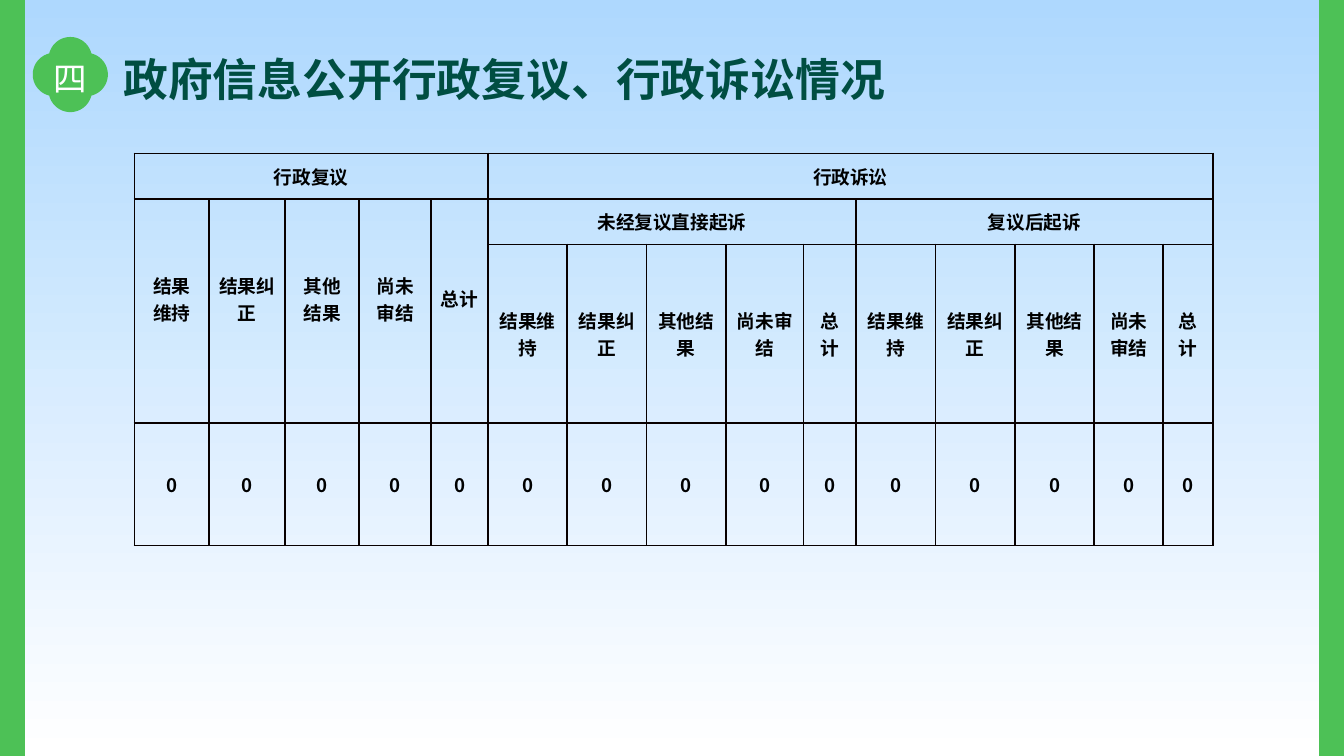
"""Build the slide on administrative review and litigation results."""
import math

from lxml import etree
from pptx import Presentation, util as u
from pptx.dml.color import RGBColor
from pptx.enum import shapes, text
from pptx.oxml import ns

GREEN = RGBColor(0x4D, 0xC1, 0x56)
DARK_GREEN = RGBColor(0x00, 0x4E, 0x42)
SKY = RGBColor(0xAE, 0xD8, 0xFE)
WHITE = RGBColor(0xFF, 0xFF, 0xFF)
BLACK = RGBColor(0x00, 0x00, 0x00)
BORDER = RGBColor(0x08, 0x00, 0x00)

WIDTH, HEIGHT, BAR = 25.4, 14.29, 0.46
RESULTS = ["结果维持", "结果纠正", "其他结果", "尚未审结", "总计"]
COLS = [1.41, 1.44, 1.4, 1.36, 1.07,
        1.5, 1.5, 1.5, 1.47, 0.99,
        1.5, 1.5, 1.5, 1.3, 0.94]
ROWS = [0.86, 0.86, 3.38, 2.31]


class Deck:
    """Hold the style and the current slide."""

    TITLE = {"name": "Noto Sans CJK SC", "size": u.Pt(24), "bold": True}
    NUMERAL = {"name": "Noto Sans CJK JP", "size": u.Pt(18)}
    CELL = {"name": "Noto Sans CJK SC", "size": u.Pt(10), "bold": True}

    def __init__(self, prs):
        """Add a blank slide with a sky gradient."""
        self.s = prs.slides.add_slide(prs.slide_layouts[6])
        fill = self.s.background.fill
        fill.gradient()
        fill.gradient_angle = 270
        for stop, color in zip(fill.gradient_stops, (SKY, WHITE)):
            stop.color.rgb = color

    def add_words(self, tf, words, style, color, align):
        """Put one styled run into a text frame."""
        p = tf.paragraphs[0]
        p.alignment = align
        r = p.add_run()
        r.text = words
        for name, value in style.items():
            setattr(r.font, name, value)
        r.font.color.rgb = color
        etree.SubElement(r._r.get_or_add_rPr(), ns.qn("a:ea"), typeface=style["name"])

    def bar(self, left):
        """Draw a full-height side bar."""
        sp = self.s.shapes.add_shape(shapes.MSO_SHAPE.RECTANGLE, u.Cm(left), 0,
                                     u.Cm(BAR), u.Cm(HEIGHT))
        sp.shadow.inherit = False
        sp.fill.solid()
        sp.fill.fore_color.rgb = GREEN
        sp.line.color.rgb = GREEN
        sp.line.width = u.Pt(1)

    def label(self, parent, box, words, style, color, align=text.PP_ALIGN.LEFT):
        """Add a text box to a shape tree."""
        sp = parent.add_textbox(*map(u.Cm, box))
        sp.text_frame.word_wrap = True
        self.add_words(sp.text_frame, words, style, color, align)

    def badge(self, cx, cy, words, offset=0.3, radius=0.41):
        """Draw a four-lobed clover with a numeral in it."""
        points = []
        for deg in range(0, 360, 3):
            t = math.radians(deg)
            a = math.radians((deg + 45) % 90 - 45)
            reach = offset * math.cos(a) + math.sqrt(
                radius ** 2 - (offset * math.sin(a)) ** 2)
            points.append((u.Cm(cx + reach * math.cos(t)),
                           u.Cm(cy + reach * math.sin(t))))
        group = self.s.shapes.add_group_shape().shapes
        outline = group.build_freeform(*points[0])
        outline.add_line_segments(points[1:], close=True)
        sp = outline.convert_to_shape()
        sp.shadow.inherit = False
        sp.fill.solid()
        sp.fill.fore_color.rgb = GREEN
        sp.line.fill.background()
        self.label(group, (cx - 0.57, 0.97, 1.14, 1.02), words, self.NUMERAL,
                   WHITE, text.PP_ALIGN.CENTER)

    def border(self, cell):
        """Give a cell a thin line on all four sides."""
        tcPr = cell._tc.get_or_add_tcPr()
        for i, side in enumerate("LRTB"):
            ln = etree.Element(ns.qn(f"a:ln{side}"), w=str(u.Pt(1)))
            fill = etree.SubElement(ln, ns.qn("a:solidFill"))
            etree.SubElement(fill, ns.qn("a:srgbClr"), val=str(BORDER))
            tcPr.insert(i, ln)

    def table(self, left, top, entries):
        """Add a table from (row, column, row span, column span, words)."""
        frame = self.s.shapes.add_table(len(ROWS), len(COLS), u.Cm(left), u.Cm(top),
                                        u.Cm(sum(COLS)), u.Cm(sum(ROWS)))
        tbl = frame.table
        tbl.first_row = tbl.horz_banding = False
        for col, width in zip(tbl.columns, COLS):
            col.width = u.Cm(width)
        for row, height in zip(tbl.rows, ROWS):
            row.height = u.Cm(height)
        for cell in tbl.iter_cells():
            cell.margin_left = cell.margin_right = u.Cm(0.18)
            cell.margin_top = cell.margin_bottom = 0
            cell.vertical_anchor = text.MSO_ANCHOR.MIDDLE
            cell.fill.background()
            self.border(cell)
        for row, col, down, across, words in entries:
            cell = tbl.cell(row, col)
            if down * across > 1:
                cell.merge(tbl.cell(row + down - 1, col + across - 1))
            if down > 1:
                cell.margin_bottom = u.Cm(0.47)
            self.add_words(cell.text_frame, words, self.CELL, BLACK,
                           text.PP_ALIGN.CENTER)


def main():
    """Build and save the slide."""
    prs = Presentation()
    prs.slide_width, prs.slide_height = u.Cm(WIDTH), u.Cm(HEIGHT)
    deck = Deck(prs)
    deck.bar(0)
    deck.bar(WIDTH - BAR)
    deck.label(deck.s.shapes, (2.08, 0.86, 15.62, 1.27),
               "政府信息公开行政复议、行政诉讼情况", deck.TITLE, DARK_GREEN)
    deck.badge(1.33, 1.41, "四")

    entries = [(0, 0, 1, 5, "行政复议"), (0, 5, 1, 10, "行政诉讼"),
               (1, 5, 1, 5, "未经复议直接起诉"), (1, 10, 1, 5, "复议后起诉")]
    for i, result in enumerate(RESULTS):
        entries.append((1, i, 2, 1, result))
        entries += [(2, start + i, 1, 1, result) for start in (5, 10)]
    entries += [(3, col, 1, 1, "0") for col in range(len(COLS))]
    deck.table(2.54, 2.9, entries)
    prs.save("out.pptx")


if __name__ == "__main__":
    main()
